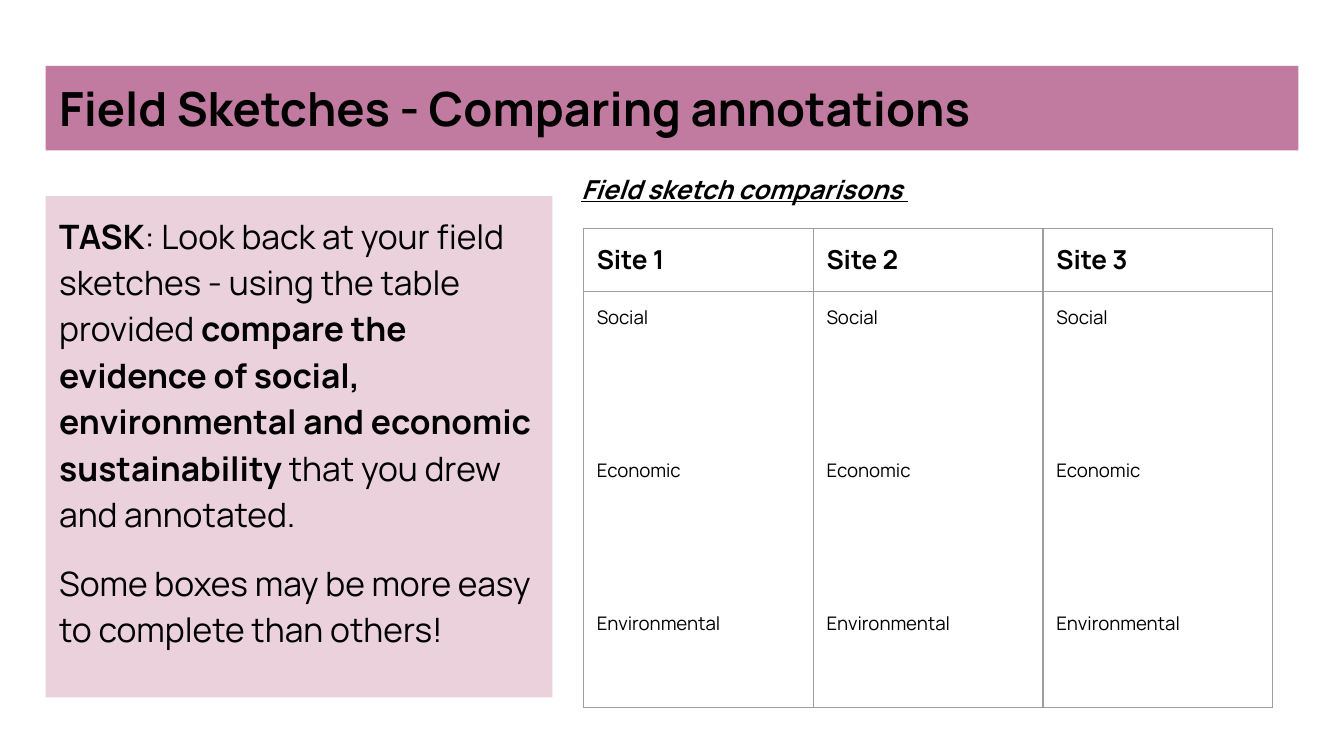
from dataclasses import dataclass

from lxml import etree
from pptx import Presentation
from pptx import util as u
from pptx.dml.color import RGBColor
from pptx.enum import text
from pptx.oxml.ns import qn


@dataclass(frozen=True)
class Theme:
    font: str = "Manrope"
    ink: str = "000000"
    banner: str = "C27BA0"
    panel: str = "EAD1DC"
    grid: str = "9E9E9E"
    title: float = 25.2
    body: float = 18
    heading: float = 14
    label: float = 10
    grid_width: float = 0.75
    inset: float = 0.1


def add_text(p, content, theme, size, bold=False, italic=None, underline=None):
    r = p.add_run()
    r.text = content
    f = r.font
    f.name, f.size = theme.font, u.Pt(size)
    f.bold, f.italic, f.underline = bold, italic, underline
    f.color.rgb = RGBColor.from_string(theme.ink)


class SlideBuilder:
    def __init__(self, prs, theme):
        self.theme = theme
        self.s = prs.slides.add_slide(prs.slide_layouts[1])

    def inset(self, box):
        """Set equal margins on a text frame or a table cell."""
        box.margin_left = box.margin_right = u.Inches(self.theme.inset)
        box.margin_top = box.margin_bottom = u.Inches(self.theme.inset)

    def frame(self, sp, anchor):
        tf = sp.text_frame
        tf.word_wrap = True
        tf.auto_size = text.MSO_AUTO_SIZE.NONE
        tf.vertical_anchor = anchor
        self.inset(tf)
        return tf

    def panel(self, sp, box, fill, anchor):
        sp.left, sp.top, sp.width, sp.height = map(u.Inches, box)
        sp.fill.solid()
        sp.fill.fore_color.rgb = RGBColor.from_string(fill)
        return self.frame(sp, anchor)

    def title(self, content, box):
        tf = self.panel(self.s.shapes.title, box, self.theme.banner, text.MSO_ANCHOR.MIDDLE)
        p = tf.paragraphs[0]
        p.alignment = text.PP_ALIGN.LEFT
        add_text(p, content, self.theme, self.theme.title, bold=True)

    def body(self, paragraphs, box, gap):
        """Each paragraph is a list of (text, bold) pairs."""
        tf = self.panel(self.s.placeholders[1], box, self.theme.panel, text.MSO_ANCHOR.TOP)
        for i, parts in enumerate(paragraphs):
            p = tf.add_paragraph() if i else tf.paragraphs[0]
            p.line_spacing = 1.15
            p.space_before = u.Pt(gap if i else 0)
            pPr = p._p.get_or_add_pPr()
            pPr.set("marL", "0")
            pPr.set("indent", "0")
            etree.SubElement(pPr, qn("a:buNone"))
            for content, bold in parts:
                add_text(p, content, self.theme, self.theme.body, bold=bold)

    def caption(self, content, box):
        sp = self.s.shapes.add_textbox(*map(u.Inches, box))
        p = self.frame(sp, text.MSO_ANCHOR.TOP).paragraphs[0]
        p.alignment = text.PP_ALIGN.CENTER
        add_text(p, content, self.theme, self.theme.heading,
                 bold=True, italic=True, underline=True)

    def border(self, cell):
        tcPr = cell._tc.get_or_add_tcPr()
        for i, side in enumerate(("lnL", "lnR", "lnT", "lnB")):
            ln = etree.Element(qn(f"a:{side}"), w=str(u.Pt(self.theme.grid_width)))
            fill = etree.SubElement(ln, qn("a:solidFill"))
            etree.SubElement(fill, qn("a:srgbClr"), val=self.theme.grid)
            tcPr.insert(i, ln)

    def cell(self, cell, lines, size, bold=False, gap=0):
        cell.fill.background()
        self.border(cell)
        self.inset(cell)
        tf = cell.text_frame
        for i, line in enumerate(lines):
            p = tf.add_paragraph() if i else tf.paragraphs[0]
            p.space_before = u.Pt(gap if i else 0)
            add_text(p, line, self.theme, size, bold=bold)

    def table(self, headings, labels, left, top, col_width, row_heights, gap):
        n = len(headings)
        size = (col_width * n, sum(row_heights))
        tbl = self.s.shapes.add_table(2, n, *map(u.Inches, (left, top, *size))).table
        tbl.first_row = tbl.horz_banding = False
        for row, height in zip(tbl.rows, row_heights):
            row.height = u.Inches(height)
        for c, heading in enumerate(headings):
            tbl.columns[c].width = u.Inches(col_width)
            self.cell(tbl.cell(0, c), [heading], self.theme.heading, bold=True)
            self.cell(tbl.cell(1, c), labels, self.theme.label, gap=gap)


def main():
    # Widescreen slide, 16:9
    prs = Presentation()
    prs.slide_width = u.Inches(10)
    prs.slide_height = prs.slide_width * 9 // 16
    b = SlideBuilder(prs, Theme())

    # Title banner
    b.title("Field Sketches - Comparing annotations", (0.34, 0.49, 9.32, 0.63))

    # Task panel
    b.body([
        [("TASK", True),
         (": Look back at your field sketches - using the table provided ", False),
         ("compare the evidence of social, environmental and economic sustainability", True),
         (" that you drew and annotated.", False)],
        [("Some boxes may be more easy to complete than others!", False)],
    ], (0.34, 1.46, 3.77, 3.73), gap=12)

    # Comparison table, with writing space under each label
    b.table([f"Site {n}" for n in (1, 2, 3)], ["Social", "Economic", "Environmental"],
            left=4.34, top=1.7, col_width=1.71, row_heights=(0.46, 3.1), gap=68.3)

    # Table caption
    b.caption("Field sketch comparisons ", (3.9, 1.19, 3.28, 0.44))

    prs.save("out.pptx")


if __name__ == "__main__":
    main()
